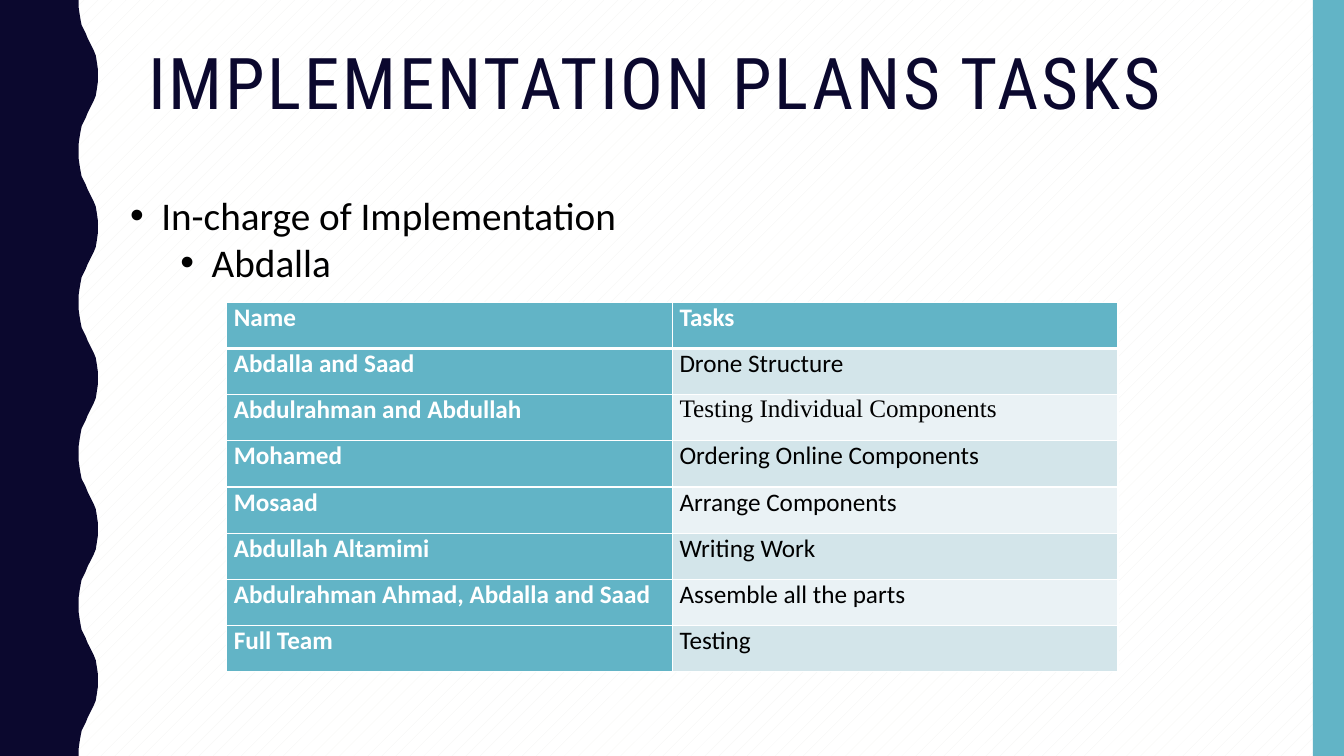
from lxml import etree
from pptx import Presentation
from pptx.dml.color import RGBColor
from pptx.enum.dml import MSO_PATTERN
from pptx.enum.shapes import MSO_SHAPE
from pptx.enum.text import MSO_ANCHOR, MSO_AUTO_SIZE, PP_ALIGN
from pptx.oxml.ns import qn
from pptx.util import Inches, Pt

RECTANGLE = MSO_SHAPE.RECTANGLE
DOTS = MSO_PATTERN.PERCENT_5
TOP = MSO_ANCHOR.TOP
NO_AUTOFIT = MSO_AUTO_SIZE.NONE
LEFT = PP_ALIGN.LEFT

NAVY, TEAL, WHITE, BLACK = "0B082E", "62B4C6", "FFFFFF", "000000"
BANDS = ["D3E5EA", "EAF2F5"]
BODY_FONT, SERIF_FONT = "Calibri", "Times New Roman"

TITLE = "IMPLEMENTATION PLANS TASKS"
BULLETS = [("In-charge of Implementation", 0), ("Abdalla", 1)]
TASKS = [
    ("Name", "Tasks"),
    ("Abdalla and Saad", "Drone Structure"),
    ("Abdulrahman and Abdullah", "Testing Individual Components"),
    ("Mohamed", "Ordering Online Components"),
    ("Mosaad", "Arrange Components"),
    ("Abdullah Altamimi", "Writing Work"),
    ("Abdulrahman Ahmad, Abdalla and Saad", "Assemble all the parts"),
    ("Full Team", "Testing"),
]
SERIF_TASK = "Testing Individual Components"

WAVE_PERIOD, WAVE_COUNT = 1.5, 5
HALF_WAVE = [
    (0.78, 0), (0.78, 0.07), (0.79, 0.14), (0.8, 0.2), (0.81, 0.25),
    (0.83, 0.29), (0.85, 0.33), (0.87, 0.38), (0.89, 0.42), (0.91, 0.46),
    (0.93, 0.5), (0.95, 0.55), (0.96, 0.61), (0.97, 0.68), (0.97, 0.75),
]


def color(value):
    return RGBColor.from_string(value)


def paint(shape, fill):
    shape.shadow.inherit = False
    shape.fill.solid()
    shape.fill.fore_color.rgb = color(fill)
    shape.line.fill.background()


def place(shape, left, top, width, height):
    box = {"left": left, "top": top, "width": width, "height": height}
    for name, value in box.items():
        setattr(shape, name, Inches(value))


def write(paragraph, text, font_color, **formats):
    run = paragraph.add_run()
    run.text = text
    for name, value in formats.items():
        setattr(run.font, name, value)
    run.font.color.rgb = color(font_color)
    return run


def add_wave(slide):
    mirrored = [(x, WAVE_PERIOD - y) for x, y in reversed(HALF_WAVE[:-1])]
    wave = HALF_WAVE + mirrored
    edge = [(Inches(x), Inches(y + WAVE_PERIOD * index))
            for index in range(WAVE_COUNT) for x, y in wave]
    builder = slide.shapes.build_freeform(0, 0)
    builder.add_line_segments(edge + [(0, Inches(7.5))], close=True)
    paint(builder.convert_to_shape(), NAVY)


def add_title(slide):
    title = slide.shapes.title
    place(title, 1.37, 0.42, 11.13, 1.63)
    frame = title.text_frame
    frame.vertical_anchor = TOP
    frame.auto_size = NO_AUTOFIT
    frame.word_wrap = True
    paragraph = frame.paragraphs[0]
    paragraph.alignment = LEFT
    paragraph.line_spacing = 0.9
    run = write(paragraph, TITLE, NAVY, name="Roboto Condensed", size=Pt(51))
    run.font.bold = False
    run.font._element.set("spc", "200")


def add_bullets(slide):
    body = slide.placeholders[1]
    place(body, 1.19, 1.85, 6.67, 1.04)
    frame = body.text_frame
    frame.auto_size = NO_AUTOFIT
    frame.vertical_anchor = TOP
    for index, (text, level) in enumerate(BULLETS):
        paragraph = frame.add_paragraph() if index else frame.paragraphs[0]
        paragraph.level = level
        paragraph.line_spacing = 1.0
        paragraph.space_before = Pt(0)
        properties = paragraph._p.get_or_add_pPr()
        properties.set("marL", str(Inches(0.31 + 0.5 * level)))
        properties.set("indent", str(Inches(-0.31)))
        etree.SubElement(properties, qn("a:buFont"), typeface="Arial")
        etree.SubElement(properties, qn("a:buChar"), char="•")
        write(paragraph, text, BLACK, name=BODY_FONT, size=Pt(28))


def add_borders(cell, widths):
    properties = cell._tc.get_or_add_tcPr()
    for side, width in widths.items():
        line = etree.SubElement(properties, qn(f"a:ln{side}"), w=str(Pt(width)))
        fill = etree.SubElement(line, qn("a:solidFill"))
        etree.SubElement(fill, qn("a:srgbClr"), val=WHITE)


def add_task_table(slide):
    rows, row_height, column_width = len(TASKS), 0.458, 4.42
    table = slide.shapes.add_table(
        rows, 2, Inches(2.25), Inches(3),
        Inches(2 * column_width), Inches(rows * row_height)).table
    for row_index, texts in enumerate(TASKS):
        table.rows[row_index].height = Inches(row_height)
        for column_index, text in enumerate(texts):
            cell = table.cell(row_index, column_index)
            heading = row_index == 0 or column_index == 0
            margins = {"margin_left": 0.07, "margin_right": 0.07,
                       "margin_top": 0, "margin_bottom": 0}
            for name, value in margins.items():
                setattr(cell, name, Inches(value))
            add_borders(cell, {"L": 1, "R": 1,
                               "T": 3 if row_index == 1 else 1,
                               "B": 3 if row_index == 0 else 1})
            cell.fill.solid()
            fill = TEAL if heading else BANDS[(row_index - 1) % 2]
            cell.fill.fore_color.rgb = color(fill)
            write(cell.text_frame.paragraphs[0], text,
                  WHITE if heading else BLACK, size=Pt(18), bold=heading,
                  name=SERIF_FONT if text == SERIF_TASK else BODY_FONT)


def main():
    presentation = Presentation()
    presentation.slide_width = Inches(13.33)
    presentation.slide_height = Inches(7.5)
    slide = presentation.slides.add_slide(presentation.slide_layouts[1])
    background = slide.background.fill
    background.patterned()
    background.pattern = DOTS
    background.fore_color.rgb = color("F3F3F2")
    background.back_color.rgb = color(WHITE)
    add_wave(slide)
    side_bar = slide.shapes.add_shape(
        RECTANGLE, Inches(13.02), 0, Inches(0.31), Inches(7.5))
    paint(side_bar, TEAL)
    add_title(slide)
    add_task_table(slide)
    add_bullets(slide)
    presentation.save("out.pptx")


if __name__ == "__main__":
    main()
